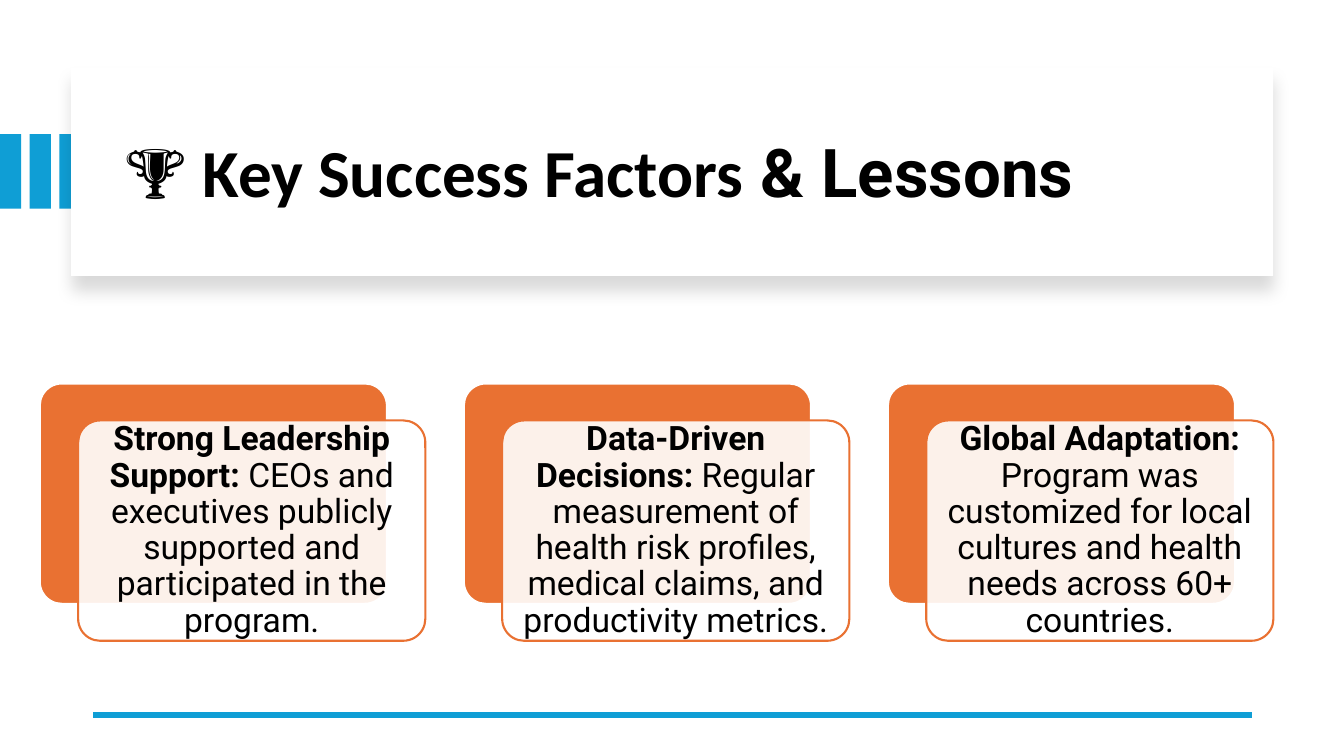
from lxml import etree
from pptx import Presentation
from pptx.dml.color import RGBColor
from pptx.enum.shapes import MSO_CONNECTOR, MSO_SHAPE
from pptx.enum.text import MSO_ANCHOR, MSO_AUTO_SIZE, PP_ALIGN
from pptx.oxml import parse_xml
from pptx.oxml.ns import nsdecls, qn
from pptx.util import Pt

RECT, ROUNDED = MSO_SHAPE.RECTANGLE, MSO_SHAPE.ROUNDED_RECTANGLE
STRAIGHT = MSO_CONNECTOR.STRAIGHT
MIDDLE = MSO_ANCHOR.MIDDLE
LEFT, CENTER = PP_ALIGN.LEFT, PP_ALIGN.CENTER
NO_FIT = MSO_AUTO_SIZE.NONE

# Content
TITLE = [("🏆", "Cabin", True), (" Key Success Factors", "Calibri", True),
         (" & Lessons", "Roboto", True)]
FACTORS = [
    ("Strong Leadership Support:",
     " CEOs and executives publicly supported and participated in the program."),
    ("Data-Driven Decisions:",
     " Regular measurement of health risk profiles, medical claims, and productivity metrics."),
    ("Global Adaptation:",
     " Program was customized for local cultures and health needs across 60+ countries."),
]

# Colours
BLUE = RGBColor(0x0F, 0x9E, 0xD5)
ORANGE = RGBColor(0xE9, 0x71, 0x32)
WHITE = RGBColor(0xFF, 0xFF, 0xFF)
BLACK = RGBColor(0, 0, 0)

# Layout, in points
STRIPE_COUNT, STRIPE_STEP = 3, 21.2
STRIPE_TOP, STRIPE_WIDTH, STRIPE_HEIGHT = 95.8, 15.1, 53.3
CARD_LEFT, CARD_TOP, CARD_STEP = 28.4, 273.9, 302.9
CARD_WIDTH, CARD_HEIGHT = 248, 157.4
FRONT_SHIFT_X, FRONT_SHIFT_Y = 27.4, 26.4

deck = Presentation()
deck.slide_width, deck.slide_height = Pt(960), Pt(540)
page = deck.slides.add_slide(deck.slide_layouts[5])


def add_box(kind, left, top, width, height, fill, line=None):
    box = page.shapes.add_shape(kind, Pt(left), Pt(top), Pt(width), Pt(height))
    box.shadow.inherit = False
    box.fill.solid()
    box.fill.fore_color.rgb = fill
    if line is None:
        box.line.fill.background()
    else:
        box.line.color.rgb = line
        box.line.width = Pt(1.5)
    if kind == ROUNDED:
        box.adjustments[0] = 0.1
    return box


def write(box, spans, size, align):
    frame = box.text_frame
    frame.word_wrap = True
    frame.auto_size = NO_FIT
    frame.vertical_anchor = MIDDLE
    para = frame.paragraphs[0]
    para.alignment = align
    para.line_spacing = 0.9
    for text, font, bold in spans:
        span = para.add_run()
        span.text = text
        span.font.name = font
        span.font.size = Pt(size)
        span.font.bold = bold
        span.font.color.rgb = BLACK


# Stripes at the left edge
for number in range(STRIPE_COUNT):
    add_box(RECT, number * STRIPE_STEP, STRIPE_TOP, STRIPE_WIDTH, STRIPE_HEIGHT, BLUE)

# Title panel with its soft shadow
panel = add_box(RECT, 50.8, 48.2, 858.7, 149, WHITE)
effects = panel.element.spPr.find(qn("a:effectLst"))
effects.append(parse_xml(
    f'<a:outerShdw {nsdecls("a")} blurRad="{Pt(11)}" dist="{Pt(10)}" dir="5400000" '
    'algn="t" rotWithShape="0"><a:srgbClr val="000000"><a:alpha val="15000"/>'
    '</a:srgbClr></a:outerShdw>'))

# Title, raised above the panel
title = page.shapes.title
title.left, title.top, title.width, title.height = Pt(82), Pt(64), Pt(801.5), Pt(122.5)
write(title, TITLE, 48, LEFT)
panel.element.addnext(title.element)

# Bottom rule
rule = page.shapes.add_connector(STRAIGHT, Pt(894.2), Pt(510.5), Pt(66.2), Pt(510.5))
rule.line.color.rgb = BLUE
rule.line.width = Pt(4.5)
etree.SubElement(rule.element.spPr, qn("a:effectLst"))

# Factor cards: an orange back and a translucent front
for number, (heading, detail) in enumerate(FACTORS):
    left = CARD_LEFT + number * CARD_STEP
    add_box(ROUNDED, left, CARD_TOP, CARD_WIDTH, CARD_HEIGHT, ORANGE, WHITE)
    front = add_box(ROUNDED, left + FRONT_SHIFT_X, CARD_TOP + FRONT_SHIFT_Y,
                    CARD_WIDTH, CARD_HEIGHT, WHITE, ORANGE)
    fill_color = front.element.spPr.find(qn("a:solidFill"))[0]
    etree.SubElement(fill_color, qn("a:alpha"), val="90000")
    frame = front.text_frame
    frame.margin_left = frame.margin_right = Pt(7.2)
    frame.margin_top = frame.margin_bottom = Pt(7.2)
    write(front, [(heading, "Roboto", True), (detail, "Roboto", False)], 24, CENTER)

deck.save("out.pptx")
